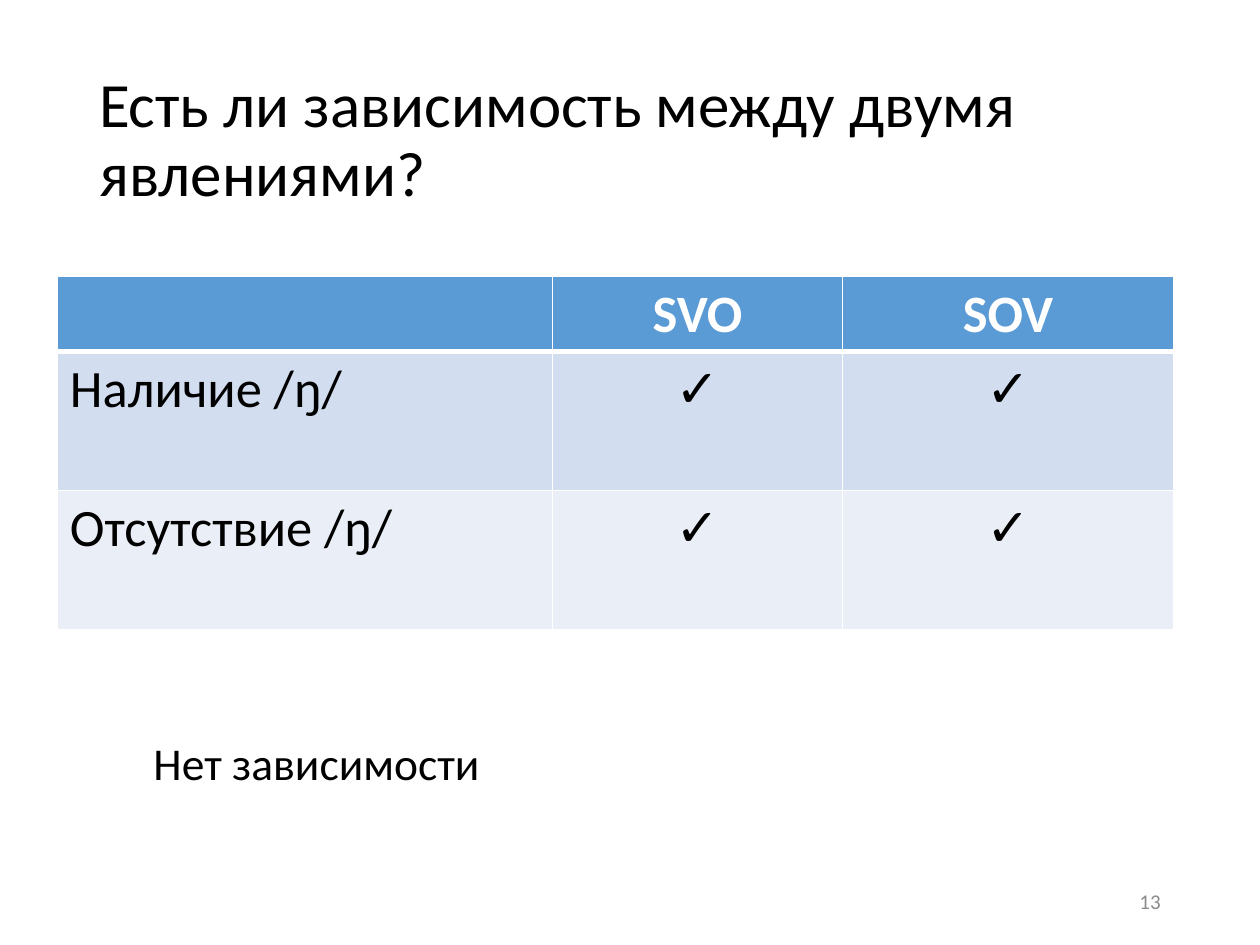
from dataclasses import dataclass

from lxml import etree
from pptx import Presentation
from pptx import util as u
from pptx.dml.color import RGBColor
from pptx.enum import text as t
from pptx.oxml.ns import qn

WIDE, HIGH = u.Inches(10), u.Inches(7.5)
FONT = "Calibri"
INK = {
    "text": "000000",
    "white": "FFFFFF",
    "page": "8C8C8C",
    "head": "5B9BD5",
    "odd": "D2DEEF",
    "even": "EAEFF7",
}
LEFT, RIGHT = t.PP_ALIGN.LEFT, t.PP_ALIGN.RIGHT
MID = t.PP_ALIGN.CENTER


@dataclass
class Box:
    """Place and size in percent of the slide."""
    left: float
    top: float
    width: float
    height: float

    def emu(self) -> tuple[int, int, int, int]:
        return (int(WIDE * self.left / 100), int(HIGH * self.top / 100),
                int(WIDE * self.width / 100), int(HIGH * self.height / 100))


@dataclass
class Label:
    text: str
    box: Box
    size: int
    ink: str = "text"
    align: t.PP_ALIGN = LEFT
    anchor: t.MSO_ANCHOR = t.MSO_ANCHOR.MIDDLE
    lead: float = 1.0


@dataclass
class Row:
    name: str
    fill: str
    share: float
    top: float = 1
    base: float = 1
    ink: str = "text"
    bold: bool = False


LABELS = [
    Label("Есть ли зависимость между двумя явлениями?",
          Box(6.9, 5.33, 86.2, 19.33), 36, lead=0.9),
    Label("13", Box(70.6, 92.67, 22.5, 5.33), 12, "page", RIGHT),
    Label("Нет зависимости", Box(11.2, 77.15, 77.6, 7.2), 26,
          anchor=t.MSO_ANCHOR.TOP),
]
GRID = Box(4.55, 29.2, 88.6, 37.33)
COLS = (3.93, 2.3, 2.63)
ORDERS = ("SVO", "SOV")
ROWS = [
    Row("", "head", 0.59, base=3, ink="white", bold=True),
    Row("Наличие /ŋ/", "odd", 1.1, top=3),
    Row("Отсутствие /ŋ/", "even", 1.1),
]
STAGES = ("", "✓")


def style(frame, size: int, ink: str, align, bold: bool = False) -> None:
    for para in frame.paragraphs:
        para.alignment = align
        for run in para.runs:
            font = run.font
            font.name, font.size, font.bold = FONT, u.Pt(size), bold
            font.color.rgb = RGBColor.from_string(INK[ink])


def write(slide, label: Label) -> None:
    frame = slide.shapes.add_textbox(*label.box.emu()).text_frame
    frame.word_wrap = True
    frame.vertical_anchor = label.anchor
    frame.text = label.text
    frame.paragraphs[0].line_spacing = label.lead
    style(frame, label.size, label.ink, label.align)


def edge(cell, row: Row) -> None:
    """Give a cell its white borders; call before filling it."""
    props = cell._tc.get_or_add_tcPr()
    sides = {"lnL": 1, "lnR": 1, "lnT": row.top, "lnB": row.base}
    for side, width in sides.items():
        line = etree.SubElement(props, qn(f"a:{side}"), w=str(u.Pt(width)))
        fill = etree.SubElement(line, qn("a:solidFill"))
        etree.SubElement(fill, qn("a:srgbClr"), val=INK["white"])


def draw_table(slide, mark: str) -> None:
    """Draw the word-order table with one mark in all its answer cells."""
    left, top, width, height = GRID.emu()
    table = slide.shapes.add_table(
        len(ROWS), len(COLS), left, top, width, height).table
    table.horz_banding = False
    for col, share in zip(table.columns, COLS):
        col.width = int(width * share / sum(COLS))
    total = sum(row.share for row in ROWS)
    for line, row in zip(table.rows, ROWS):
        line.height = int(height * row.share / total)
        rest = (mark,) * len(ORDERS) if row.name else ORDERS
        for col, (cell, word) in enumerate(zip(line.cells, (row.name, *rest))):
            edge(cell, row)
            cell.fill.solid()
            cell.fill.fore_color.rgb = RGBColor.from_string(INK[row.fill])
            cell.text_frame.text = word
            style(cell.text_frame, 30, row.ink, MID if col else LEFT, row.bold)


def main() -> None:
    deck = Presentation()
    deck.slide_width, deck.slide_height = WIDE, HIGH
    slide = deck.slides.add_slide(deck.slide_layouts[6])
    for label in LABELS:
        write(slide, label)
    for mark in STAGES:
        draw_table(slide, mark)
    deck.save("out.pptx")


if __name__ == "__main__":
    main()
